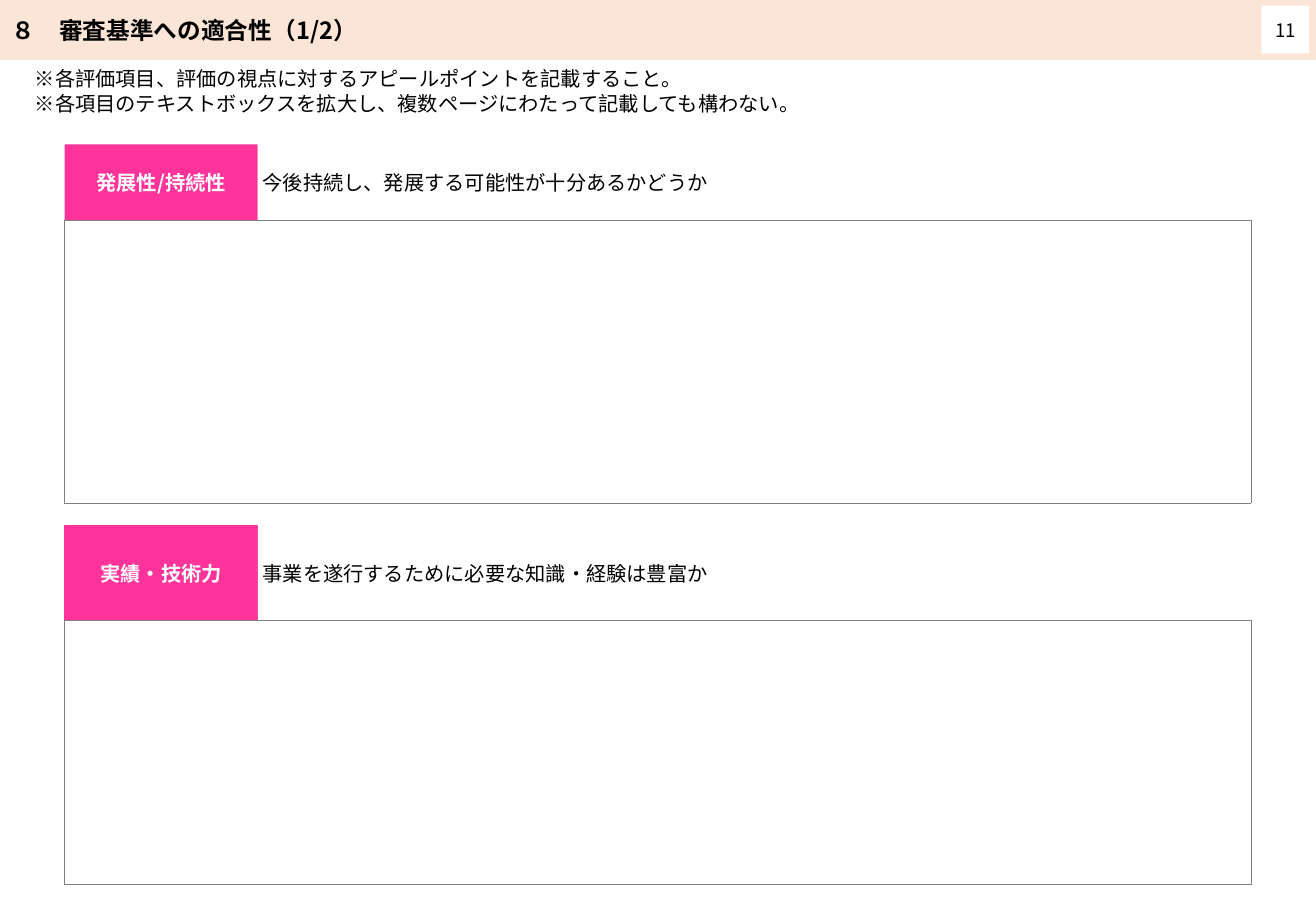
from dataclasses import dataclass
from typing import Optional

from lxml import etree
from pptx import Presentation
from pptx.dml.color import RGBColor
from pptx.enum.shapes import MSO_SHAPE
from pptx.enum.text import MSO_ANCHOR, MSO_AUTO_SIZE, PP_ALIGN
from pptx.oxml.ns import qn
from pptx.util import Cm, Pt

RECTANGLE = MSO_SHAPE.RECTANGLE
LEFT, CENTER = PP_ALIGN.LEFT, PP_ALIGN.CENTER
TOP, MIDDLE = MSO_ANCHOR.TOP, MSO_ANCHOR.MIDDLE
GROW = MSO_AUTO_SIZE.SHAPE_TO_FIT_TEXT

FONT = "Noto Sans CJK JP"
PEACH = RGBColor(0xFB, 0xE5, 0xD6)
PINK = RGBColor(0xFF, 0x33, 0x99)
WHITE = RGBColor(0xFF, 0xFF, 0xFF)
BLACK = RGBColor(0, 0, 0)
GRAY = "808080"

SLIDE_WIDTH, SLIDE_HEIGHT = 27.51, 19.05
HEADER_HEIGHT = 1.24
SECTION_LEFT, SECTION_WIDTH = 1.35, 24.8
LABEL_WIDTH = 4.04


@dataclass(frozen=True)
class Box:
    left: float
    top: float
    width: float
    height: float

    def lengths(self) -> tuple:
        return Cm(self.left), Cm(self.top), Cm(self.width), Cm(self.height)


@dataclass(frozen=True)
class Criterion:
    label: str
    viewpoint: str
    top: float
    heading_height: float
    answer_height: float
    outline: Optional[RGBColor] = None


CRITERIA = (
    Criterion("発展性/持続性", "今後持続し、発展する可能性が十分あるかどうか", 3.02, 1.58, 5.92),
    Criterion("実績・技術力", "事業を遂行するために必要な知識・経験は豊富か", 11, 1.98, 5.51, PINK),
)
NOTES = (
    "※各評価項目、評価の視点に対するアピールポイントを記載すること。",
    "※各項目のテキストボックスを拡大し、複数ページにわたって記載しても構わない。",
)


def write(frame, *lines: str, size: float = 12, color: RGBColor = BLACK,
          bold: bool = False, align=LEFT, anchor=MIDDLE,
          inset: Optional[float] = None, after: float = 0,
          spacing: Optional[float] = None) -> None:
    frame.word_wrap = True
    frame.vertical_anchor = anchor
    if inset is not None:
        frame.margin_left = frame.margin_right = Cm(inset)
        frame.margin_top = frame.margin_bottom = Cm(inset)
    for index, line in enumerate(lines):
        paragraph = frame.add_paragraph() if index else frame.paragraphs[0]
        paragraph.alignment = align
        paragraph.space_after = Pt(after)
        if spacing:
            paragraph.line_spacing = Pt(spacing)
        run = paragraph.add_run()
        run.text = line
        run.font.size = Pt(size)
        run.font.bold = bold
        run.font.color.rgb = color
        run.font.name = FONT
        east_asian = etree.SubElement(run.font._element, qn("a:ea"))
        east_asian.set("typeface", FONT)


def add_block(shapes, box: Box, fill: RGBColor,
              outline: Optional[RGBColor] = None, weight: float = 0.75):
    block = shapes.add_shape(RECTANGLE, *box.lengths())
    block.shadow.inherit = False
    block.fill.solid()
    block.fill.fore_color.rgb = fill
    if outline is None:
        block.line.fill.background()
    else:
        block.line.color.rgb = outline
        block.line.width = Pt(weight)
    return block.text_frame


def add_answer_table(shapes, box: Box) -> None:
    table = shapes.add_table(1, 1, *box.lengths()).table
    table.first_row = table.horz_banding = False
    cell = table.cell(0, 0)
    cell.fill.background()
    properties = cell._tc.get_or_add_tcPr()
    for index, side in enumerate(("lnL", "lnR", "lnT", "lnB")):
        border = etree.Element(qn(f"a:{side}"), w=str(Pt(0.5)))
        fill = etree.SubElement(border, qn("a:solidFill"))
        etree.SubElement(fill, qn("a:srgbClr"), val=GRAY)
        properties.insert(index, border)


def add_criterion(shapes, criterion: Criterion) -> None:
    heading = shapes.add_group_shape().shapes
    top, height = criterion.top, criterion.heading_height
    label = Box(SECTION_LEFT, top, LABEL_WIDTH, height)
    viewpoint = Box(SECTION_LEFT + LABEL_WIDTH, top, SECTION_WIDTH - LABEL_WIDTH, height)
    write(add_block(heading, label, PINK, criterion.outline), criterion.label,
          color=WHITE, bold=True, align=CENTER, inset=0.1, after=4)
    write(add_block(heading, viewpoint, WHITE), criterion.viewpoint, inset=0.1, after=4)
    add_answer_table(shapes, Box(SECTION_LEFT, top + height, SECTION_WIDTH,
                                 criterion.answer_height))


def main() -> None:
    presentation = Presentation()
    presentation.slide_width = Cm(SLIDE_WIDTH)
    presentation.slide_height = Cm(SLIDE_HEIGHT)
    shapes = presentation.slides.add_slide(presentation.slide_layouts[6]).shapes

    header = add_block(shapes, Box(0, 0, SLIDE_WIDTH, HEADER_HEIGHT), PEACH, PEACH, 1)
    write(header, "８\u3000審査基準への適合性（1/2）".replace("\u3000", "　"), size=14, bold=True)
    page_number = add_block(shapes, Box(26.37, 0.12, 1, 1), WHITE)
    write(page_number, "11", size=11, align=CENTER, inset=0)

    notes = shapes.add_textbox(*Box(0.48, HEADER_HEIGHT, 26.57, 1.27).lengths()).text_frame
    write(notes, *NOTES, anchor=TOP, spacing=14.8)
    notes.auto_size = GROW

    for criterion in CRITERIA:
        add_criterion(shapes, criterion)

    presentation.save("out.pptx")


if __name__ == "__main__":
    main()
